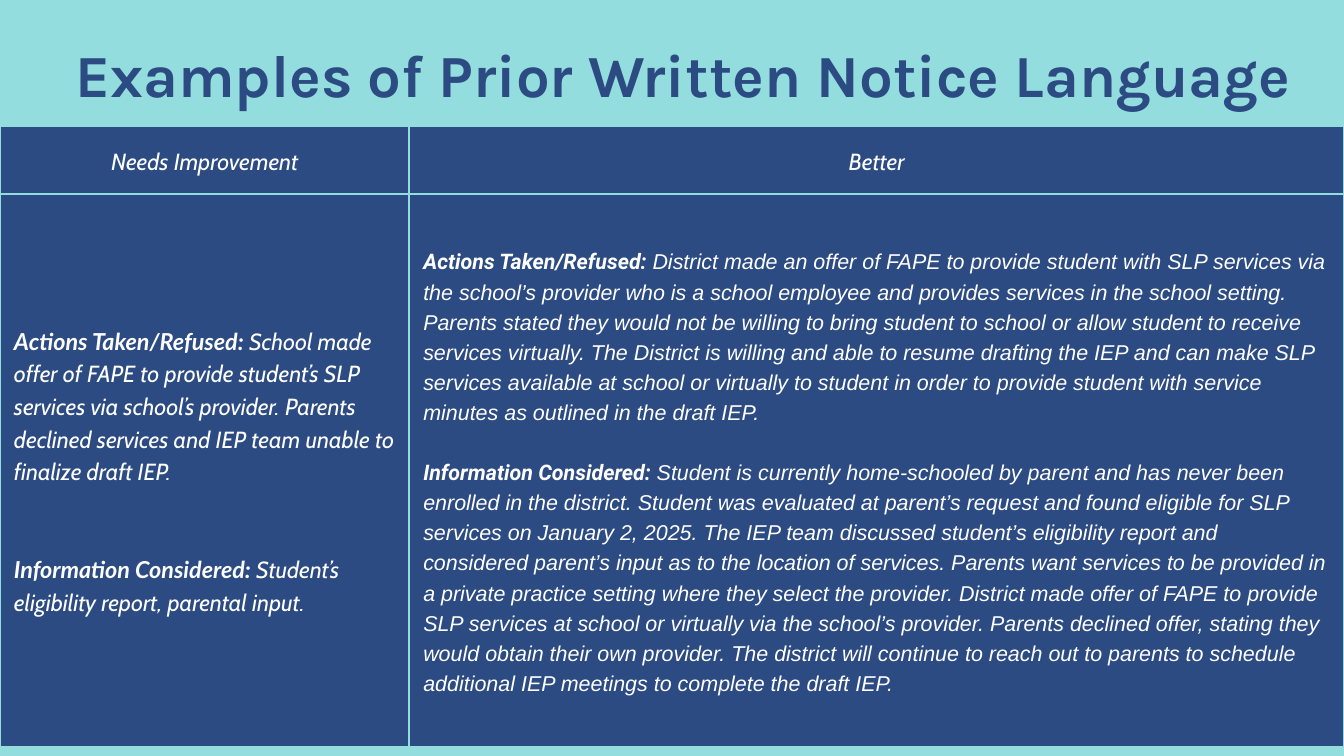
import pptx
import pptx.util
import pptx.dml.color
import pptx.enum.text
import pptx.oxml
from pptx.oxml.ns import nsdecls

Pt = pptx.util.Pt
RGB = pptx.dml.color.RGBColor.from_string
ALIGN = pptx.enum.text.PP_ALIGN
MIDDLE = pptx.enum.text.MSO_ANCHOR.MIDDLE

# Content
COLORS = {"aqua": "94DDDE", "navy": "2B4B82", "soft": "FEFEFE", "white": "FFFFFF"}
TITLE = "Examples of Prior Written Notice Language"
HEADERS = ["Needs Improvement", "Better"]
NEEDS_IMPROVEMENT = [
    ("Actions Taken/Refused:",
     " School made offer of FAPE to provide student’s SLP services via school’s "
     "provider. Parents declined services and IEP team unable to finalize draft IEP."),
    ("Information Considered:", " Student’s eligibility report, parental input."),
]
BETTER = [
    ("Actions Taken/Refused: ",
     "District made an offer of FAPE to provide student with SLP services via the "
     "school’s provider who is a school employee and provides services in the school "
     "setting. Parents stated they would not be willing to bring student to school or "
     "allow student to receive services virtually. The District is willing and able to "
     "resume drafting the IEP and can make SLP services available at school or virtually "
     "to student in order to provide student with service minutes as outlined in the "
     "draft IEP."),
    ("Information Considered: ",
     "Student is currently home-schooled by parent and has never been enrolled in the "
     "district. Student was evaluated at parent’s request and found eligible for SLP "
     "services on January 2, 2025. The IEP team discussed student’s eligibility report "
     "and considered parent’s input as to the location of services. Parents want services "
     "to be provided in a private practice setting where they select the provider. "
     "District made offer of FAPE to provide SLP services at school or virtually via the "
     "school’s provider. Parents declined offer, stating they would obtain their own "
     "provider. The district will continue to reach out to parents to schedule additional "
     "IEP meetings to complete the draft IEP."),
]

# Formats: gap is the number of empty lines between paragraphs
LEFT = {"size": 25, "color": "soft", "label": "Lato", "body": "Cabin", "line": 35, "gap": 2}
RIGHT = {"size": 23, "color": "white", "label": "Roboto", "body": "Arial", "line": 32.2, "gap": 1}

# Layout
SLIDE_W, SLIDE_H = 1440, 810
TITLE_BOX = (80.6, 49.7, 1500, 69.8)
TABLE_TOP = 135.4
COLUMNS = [438.5, 1001.5]
ROWS = [72.7, 591.8]
INSET = 15
BORDER = 2.25


def add_run(p, text, size, name, color, bold=False, italic=False):
    r = p.add_run()
    r.text = text
    values = {"size": Pt(size), "name": name, "bold": bold, "italic": italic}
    for key, value in values.items():
        setattr(r.font, key, value)
    r.font.color.rgb = RGB(COLORS[color])


def style_cell(cell):
    for side in ("left", "right", "top", "bottom"):
        setattr(cell, "margin_" + side, Pt(INSET))
    cell.vertical_anchor = MIDDLE
    tc_pr = cell._tc.get_or_add_tcPr()
    for tag in ("lnL", "lnR", "lnT", "lnB"):
        tc_pr.append(pptx.oxml.parse_xml(
            f'<a:{tag} {nsdecls("a")} w="{Pt(BORDER)}"><a:solidFill>'
            f'<a:srgbClr val="{COLORS["aqua"]}"/></a:solidFill></a:{tag}>'))
    cell.fill.solid()
    cell.fill.fore_color.rgb = RGB(COLORS["navy"])


def fill_example(tf, sections, style):
    for i, (label, body) in enumerate(sections):
        p = tf.add_paragraph() if i else tf.paragraphs[0]
        p.line_spacing = Pt(style["line"])
        if i:
            p.space_before = Pt(style["gap"] * style["line"])
        add_run(p, label, style["size"], style["label"], style["color"], True, True)
        add_run(p, body, style["size"], style["body"], style["color"], False, True)


def main():
    prs = pptx.Presentation()
    prs.slide_width, prs.slide_height = Pt(SLIDE_W), Pt(SLIDE_H)
    s = prs.slides.add_slide(prs.slide_layouts[6])
    s.background.fill.solid()
    s.background.fill.fore_color.rgb = RGB(COLORS["aqua"])

    # Comparison table
    frame = s.shapes.add_table(len(ROWS), len(COLUMNS), 0, Pt(TABLE_TOP),
                               Pt(sum(COLUMNS)), Pt(sum(ROWS)))
    table = frame.table
    table.first_row = table.horz_banding = False
    for column, width in zip(table.columns, COLUMNS):
        column.width = Pt(width)
    for row, height in zip(table.rows, ROWS):
        row.height = Pt(height)
    for cell in table.iter_cells():
        style_cell(cell)

    # Header row
    for col, header in enumerate(HEADERS):
        p = table.cell(0, col).text_frame.paragraphs[0]
        p.alignment = ALIGN.CENTER
        p.line_spacing = Pt(LEFT["line"])
        add_run(p, header, LEFT["size"], LEFT["body"], LEFT["color"], italic=True)

    # Example row
    for col, (sections, style) in enumerate([(NEEDS_IMPROVEMENT, LEFT), (BETTER, RIGHT)]):
        fill_example(table.cell(1, col).text_frame, sections, style)

    # Title
    tf = s.shapes.add_textbox(*map(Pt, TITLE_BOX)).text_frame
    tf.word_wrap = True
    for side in ("left", "right", "top", "bottom"):
        setattr(tf, "margin_" + side, 0)
    p = tf.paragraphs[0]
    p.line_spacing = Pt(67.2)
    add_run(p, TITLE, 64, "Karla", "navy", bold=True)

    prs.save("out.pptx")


if __name__ == "__main__":
    main()
